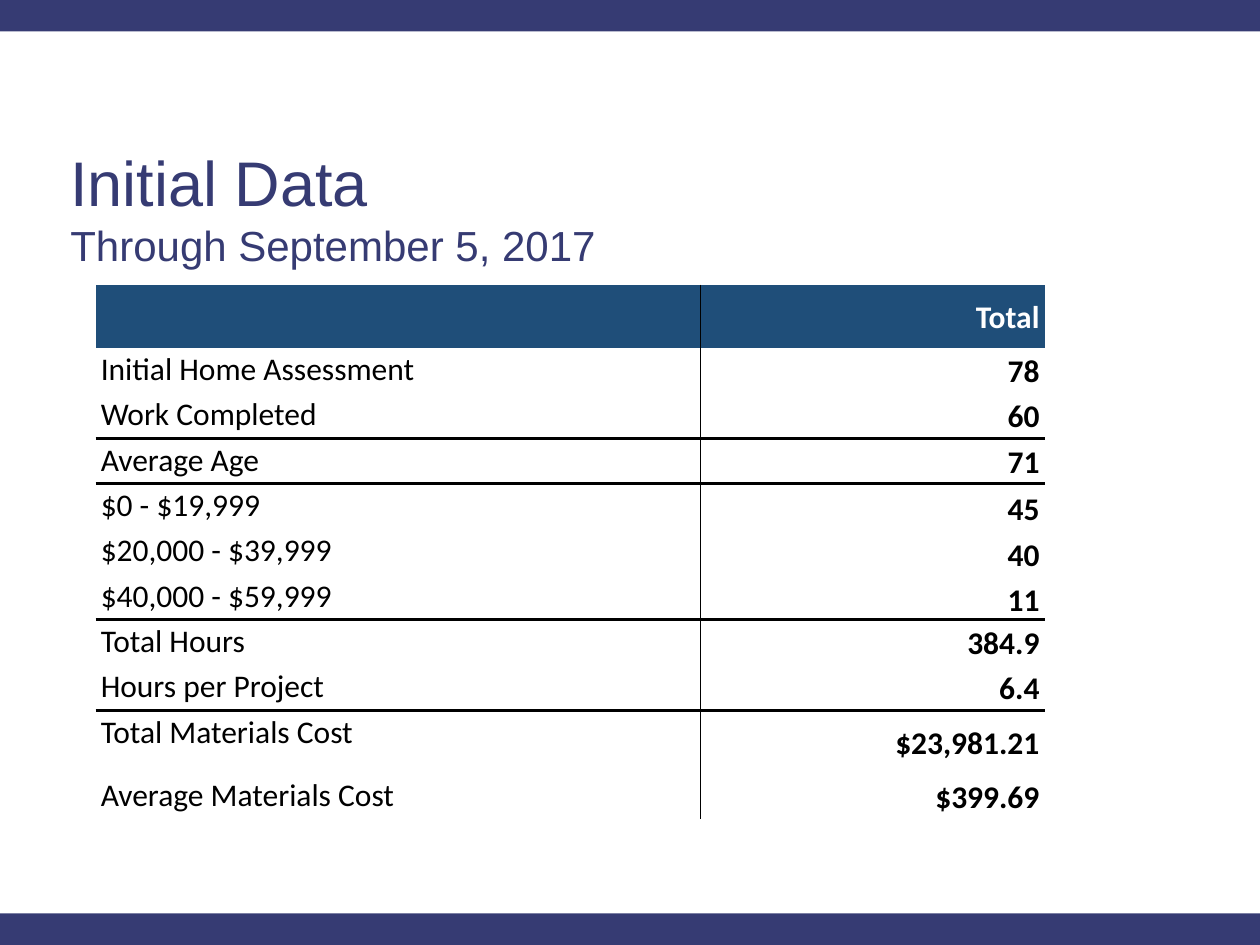
import pptx
import pptx.dml.color
import pptx.enum.shapes
import pptx.enum.text
import pptx.oxml.ns
import pptx.util
from lxml import etree

Inches = pptx.util.Inches
Pt = pptx.util.Pt
ALIGN = pptx.enum.text.PP_ALIGN
ANCHOR = pptx.enum.text.MSO_ANCHOR

NAVY, HEADER, WHITE, BLACK = "363B73", "1F4E79", "FFFFFF", "000000"

ROWS = [
    ("", "Total"),
    ("Initial Home Assessment", "78"),
    ("Work Completed", "60"),
    ("Average Age", "71"),
    ("$0 - $19,999", "45"),
    ("$20,000 - $39,999", "40"),
    ("$40,000 - $59,999", "11"),
    ("Total Hours", "384.9"),
    ("Hours per Project", "6.4"),
    ("Total Materials Cost", "$23,981.21"),
    ("Average Materials Cost", "$399.69"),
]
COL_WIDTHS = [4.8, 2.73]
TALL_ROWS = {0, 9}
GROUP_ENDS = {2, 3, 6, 8}  # rows with a heavy rule below
INCOME_ROWS = {4, 5, 6}  # rows whose values sit at the bottom


def color(value):
    return pptx.dml.color.RGBColor.from_string(value)


def apply(obj, values):
    for name, value in values.items():
        setattr(obj, name, value)


def fill_solid(fill, value):
    fill.solid()
    fill.fore_color.rgb = color(value)


def write(p, text, size, font, hex_color, bold=False):
    r = p.add_run()
    r.text = text
    apply(r.font, {"size": Pt(size), "name": font, "bold": bold})
    r.font.color.rgb = color(hex_color)


def add_background(s):
    fill_solid(s.background.fill, NAVY)
    sp = s.shapes.add_shape(pptx.enum.shapes.MSO_SHAPE.RECTANGLE,
                            0, Inches(0.25), Inches(10), Inches(7))
    sp.shadow.inherit = False
    fill_solid(sp.fill, WHITE)
    sp.line.fill.background()


def add_heading(s, text, top, height, size, anchor):
    sp = s.shapes.add_textbox(Inches(0.46), Inches(top), Inches(7.79), Inches(height))
    tf = sp.text_frame
    apply(tf, {"word_wrap": True, "vertical_anchor": anchor})
    write(tf.paragraphs[0], text, size, "Arial", NAVY)


def set_borders(cell, widths):
    """Draw the edges given in points; the other edges get no line."""
    tcPr = cell._tc.get_or_add_tcPr()
    qn = pptx.oxml.ns.qn
    for edge in "LRTB":
        width = widths.get(edge, 0)
        ln = etree.SubElement(tcPr, qn(f"a:ln{edge}"), w=str(int(Pt(width))))
        if width:
            fill = etree.SubElement(ln, qn("a:solidFill"))
            etree.SubElement(fill, qn("a:srgbClr"), val=BLACK)
        else:
            etree.SubElement(ln, qn("a:noFill"))


def format_cell(cell, text, row, col):
    is_value = col == 1
    anchor = ANCHOR.TOP
    if is_value:
        anchor = ANCHOR.BOTTOM if row in INCOME_ROWS else ANCHOR.MIDDLE
    apply(cell, {
        "margin_left": Inches(0.04), "margin_right": Inches(0.04),
        "margin_top": 0, "margin_bottom": 0, "vertical_anchor": anchor,
    })

    # Borders come before the fill in the cell properties
    widths = {"L" if is_value else "R": 1}
    if row - 1 in GROUP_ENDS:
        widths["T"] = 2.25
    if row in GROUP_ENDS:
        widths["B"] = 2.25
    set_borders(cell, widths)
    if row == 0:
        fill_solid(cell.fill, HEADER)
    else:
        cell.fill.background()

    if text:
        p = cell.text_frame.paragraphs[0]
        apply(p, {"line_spacing": 1.07,
                  "alignment": ALIGN.RIGHT if is_value else ALIGN.LEFT})
        write(p, text, 18, "Calibri", BLACK if row else WHITE, is_value)


def add_data_table(s):
    table = s.shapes.add_table(len(ROWS), len(COL_WIDTHS), Inches(0.76), Inches(2.26),
                               Inches(sum(COL_WIDTHS)), Inches(4.22)).table
    for column, width in zip(table.columns, COL_WIDTHS):
        column.width = Inches(width)
    for i, texts in enumerate(ROWS):
        table.rows[i].height = Inches(0.5 if i in TALL_ROWS else 0.36)
        for j, text in enumerate(texts):
            format_cell(table.cell(i, j), text, i, j)


def main():
    prs = pptx.Presentation()
    apply(prs, {"slide_width": Inches(10), "slide_height": Inches(7.5)})
    s = prs.slides.add_slide(prs.slide_layouts[6])

    # White panel between navy bands
    add_background(s)

    # Title and subtitle
    add_heading(s, "Initial Data", 1.1, 0.68, 36, ANCHOR.MIDDLE)
    add_heading(s, "Through September 5, 2017", 1.69, 0.59, 24, ANCHOR.TOP)

    # Results table
    add_data_table(s)

    prs.save("out.pptx")


if __name__ == "__main__":
    main()
